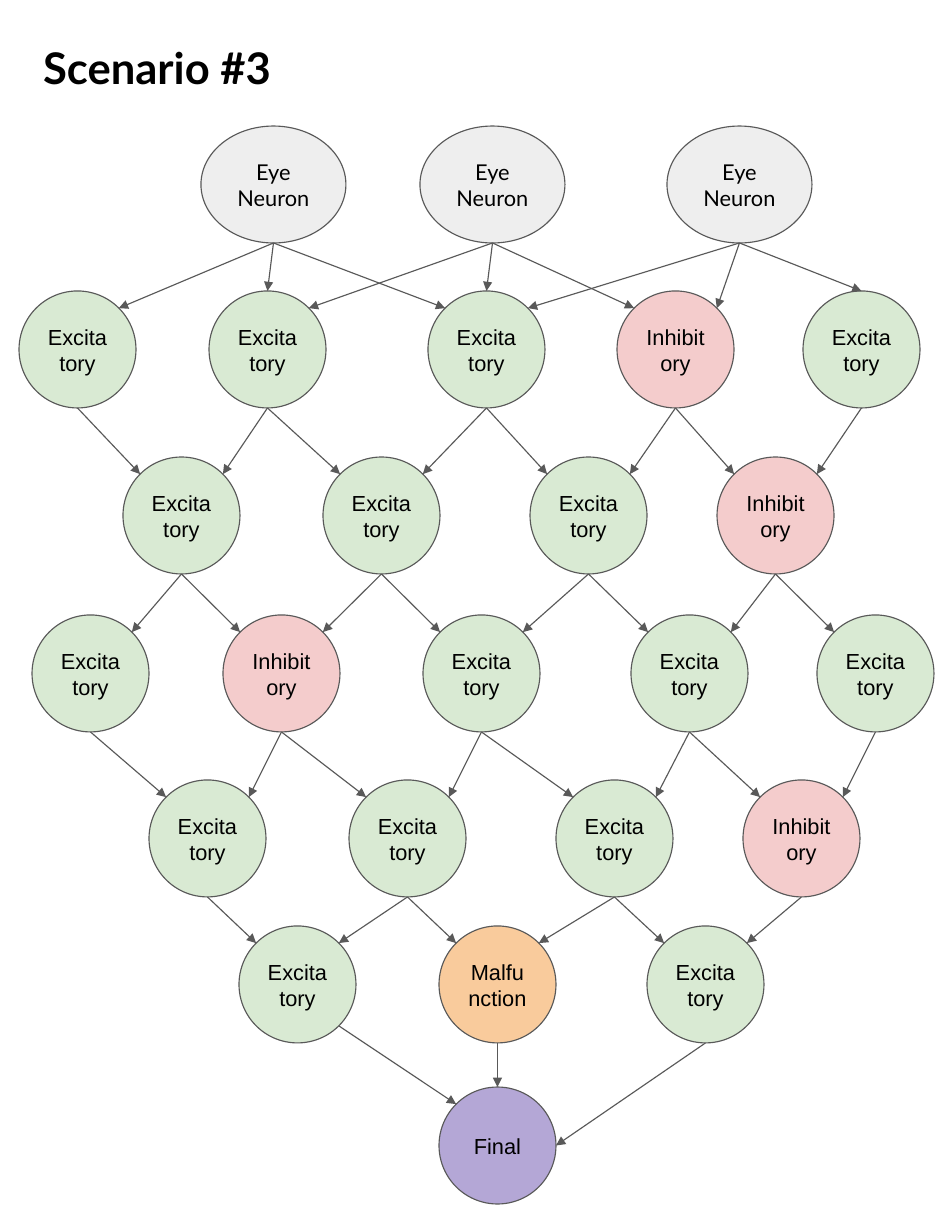
import math
from dataclasses import dataclass

import pptx
import pptx.dml.color
import pptx.enum.shapes
import pptx.enum.text
import pptx.oxml.ns
import pptx.util
from lxml import etree

TITLE = "Scenario #3"
KINDS = {
    "Y": ("Eye Neuron", "EEEEEE", "Lato", 145),
    "E": ("Excitatory", "D9EAD3", "Arial", 117),
    "I": ("Inhibitory", "F4CCCC", "Arial", 117),
    "M": ("Malfunction", "F9CB9C", "Arial", 117),
    "F": ("Final", "B4A7D6", "Arial", 117),
}
LAYERS = [
    (126, "YYY", (201, 420, 667)),
    (291, "EEEIE", (19, 209, 428, 617, 803)),
    (457, "EEEI", (123, 323, 530, 717)),
    (615, "EIEEE", (32, 223, 423, 631, 817)),
    (780, "EEEI", (149, 349, 556, 743)),
    (926, "EME", (239, 439, 647)),
    (1087, "F", (439,)),
]
TARGETS = [
    [(0, 1, 2), (1, 2, 3), (2, 3, 4)],
    [(0,), (0, 1), (1, 2), (2, 3), (3,)],
    [(0, 1), (1, 2), (2, 3), (3, 4)],
    [(0,), (0, 1), (1, 2), (2, 3), (3,)],
    [(0,), (0, 1), (1, 2), (2,)],
    [(0,), (0,), (0,)],
]
DIAGONAL = math.sqrt(0.5)
PORTS = {
    "top": (0, -1),
    "top left": (-DIAGONAL, -DIAGONAL),
    "top right": (DIAGONAL, -DIAGONAL),
    "right": (1, 0),
    "bottom": (0, 1),
    "bottom right": (DIAGONAL, DIAGONAL),
}
SPECIAL_ENTRIES = {
    (0, 0, 1): "top",
    (0, 1, 2): "top",
    (0, 2, 4): "top",
    (5, 1, 0): "top",
    (5, 2, 0): "right",
}
SPECIAL_EXITS = {(5, 0, 0): "bottom right"}
NODE_HEIGHT = 117


@dataclass
class Theme:
    text: str = "000000"
    line: str = "595959"
    title_font: str = "Lato"
    title_size: int = 28
    node_size: int = 14
    line_width: float = 0.75


theme = Theme()


def px(count):
    return pptx.util.Emu(count * 914400 // 112)


def color(code):
    return pptx.dml.color.RGBColor.from_string(code)


def style_frame(frame, anchor):
    frame.word_wrap = True
    frame.auto_size = pptx.enum.text.MSO_AUTO_SIZE.NONE
    frame.vertical_anchor = anchor
    frame.margin_left = frame.margin_right = pptx.util.Inches(0.1)
    frame.margin_top = frame.margin_bottom = pptx.util.Inches(0.1)


def style_para(para, font, size, align, bold=False):
    para.alignment = align
    para.font.name = font
    para.font.size = pptx.util.Pt(size)
    para.font.bold = bold
    para.font.color.rgb = color(theme.text)


def style_line(line):
    line.color.rgb = color(theme.line)
    line.width = pptx.util.Pt(theme.line_width)


def add_title(page):
    title = page.shapes.title
    title.left, title.top, title.width, title.height = map(px, (32, 30, 887, 76))
    title.text_frame.text = TITLE
    style_frame(title.text_frame, pptx.enum.text.MSO_ANCHOR.TOP)
    style_para(title.text_frame.paragraphs[0], theme.title_font, theme.title_size,
               pptx.enum.text.PP_ALIGN.LEFT, bold=True)


def add_node(page, kind, left, top):
    label, fill, font, width = KINDS[kind]
    node = page.shapes.add_shape(pptx.enum.shapes.MSO_SHAPE.OVAL,
                                 px(left), px(top), px(width), px(NODE_HEIGHT))
    node.shadow.inherit = False
    node.fill.solid()
    node.fill.fore_color.rgb = color(fill)
    style_line(node.line)
    node.text_frame.text = label
    style_frame(node.text_frame, pptx.enum.text.MSO_ANCHOR.MIDDLE)
    style_para(node.text_frame.paragraphs[0], font, theme.node_size,
               pptx.enum.text.PP_ALIGN.CENTER)
    return node


def port_point(node, port):
    across, down = PORTS[port]
    return (round(node.left + node.width / 2 * (1 + across)),
            round(node.top + node.height / 2 * (1 + down)))


def add_arrow(page, source, leaving, target, entering):
    arrow = page.shapes.add_connector(pptx.enum.shapes.MSO_CONNECTOR.STRAIGHT,
                                      *port_point(source, leaving),
                                      *port_point(target, entering))
    style_line(arrow.line)
    tail = etree.SubElement(arrow.line._get_or_add_ln(), pptx.oxml.ns.qn("a:tailEnd"))
    tail.set("type", "triangle")
    etree.SubElement(arrow._element.spPr, pptx.oxml.ns.qn("a:effectLst"))


def add_arrows(page, nodes):
    for layer, sources in enumerate(TARGETS):
        for start, ends in enumerate(sources):
            for end in ends:
                source, target = nodes[layer][start], nodes[layer + 1][end]
                from_left = source.left + source.width / 2 < target.left + target.width / 2
                link = (layer, start, end)
                leaving = SPECIAL_EXITS.get(link, "bottom")
                entering = SPECIAL_ENTRIES.get(link, "top left" if from_left else "top right")
                add_arrow(page, source, leaving, target, entering)


def main():
    deck = pptx.Presentation()
    deck.slide_width, deck.slide_height = px(952), px(1232)
    page = deck.slides.add_slide(deck.slide_layouts[5])
    add_title(page)
    nodes = [[add_node(page, kind, left, top) for kind, left in zip(kinds, lefts)]
             for top, kinds, lefts in LAYERS]
    add_arrows(page, nodes)
    deck.save("out.pptx")


if __name__ == "__main__":
    main()
